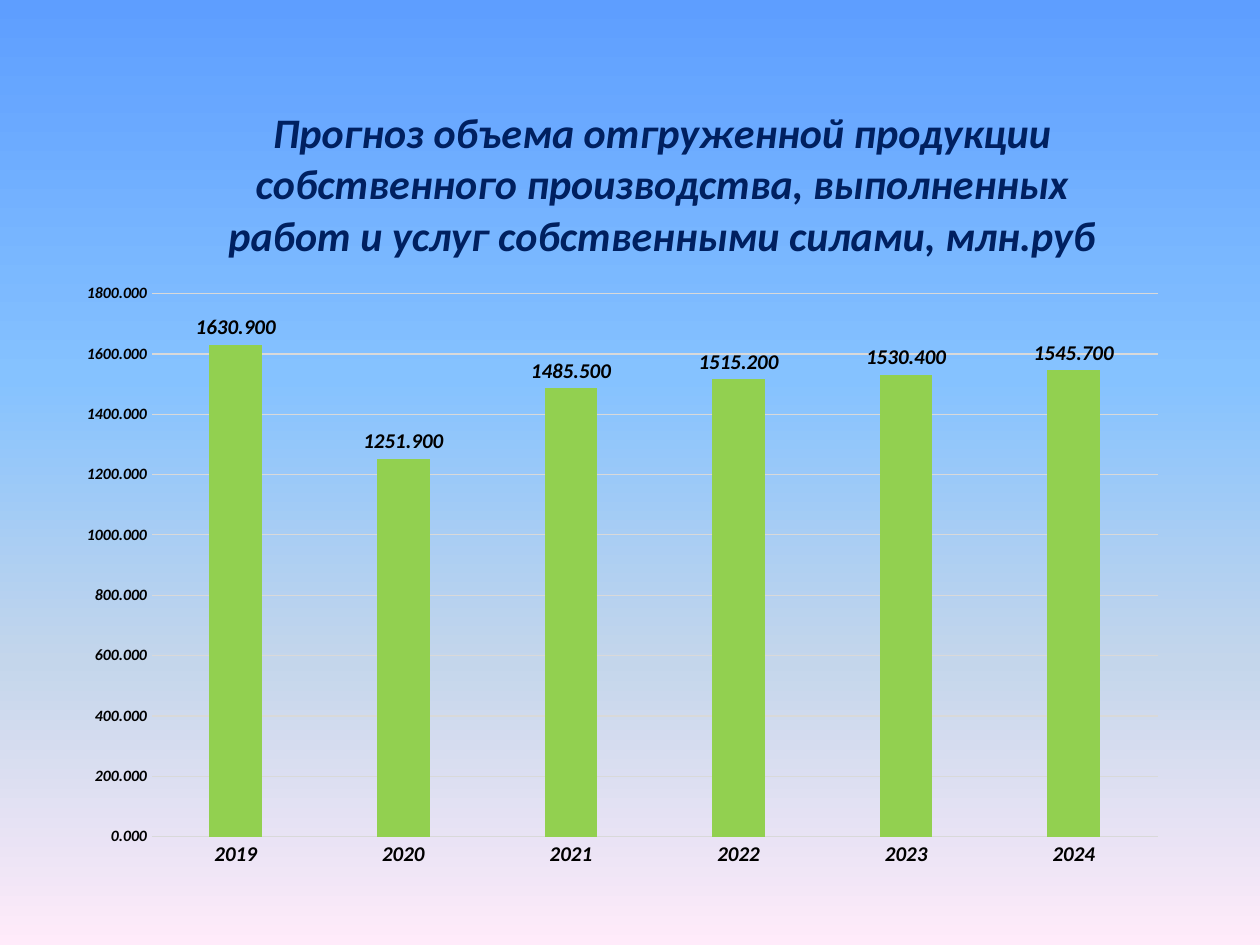
from lxml import etree
from pptx import Presentation
from pptx.chart.data import CategoryChartData
from pptx.dml.color import RGBColor
from pptx.enum.chart import XL_CHART_TYPE, XL_LABEL_POSITION, XL_TICK_MARK
from pptx.oxml.ns import qn
from pptx.util import Inches, Pt

BLACK = RGBColor(0x00, 0x00, 0x00)
NAVY = RGBColor(0x00, 0x20, 0x60)
GREEN = RGBColor(0x92, 0xD0, 0x50)
GRID_GRAY = RGBColor(0xD9, 0xD9, 0xD9)
BACKGROUND_STOPS = [(0, "5E9EFF"), (40, "85C2FF"), (70, "C4D6EB"), (100, "FFEBFA")]

TITLE = ("Прогноз объема отгруженной продукции собственного производства, "
         "выполненных работ и услуг собственными силами, млн.руб")
SHIPMENTS = {"2019": 1630.9, "2020": 1251.9, "2021": 1485.5,
             "2022": 1515.2, "2023": 1530.4, "2024": 1545.7}
NUMBER_FORMAT = "0.000"


def set_gradient_background(slide):
    fill = slide.background.fill
    fill.gradient()
    fill.gradient_angle = 270
    stops = fill.gradient_stops
    stop_list = slide.background._cSld.find(".//" + qn("a:gsLst"))
    for stop in list(stop_list):
        stop_list.remove(stop)
    for percent, color in BACKGROUND_STOPS:
        stop = etree.SubElement(stop_list, qn("a:gs"), pos=str(percent * 1000))
        etree.SubElement(stop, qn("a:srgbClr"), val=color)


def style_font(font, size, color=BLACK):
    font.name = "Calibri"
    font.size = Pt(size)
    font.bold = True
    font.italic = True
    font.color.rgb = color


def set_layout(parent, index, **settings):
    """Place a chart part by hand, in fractions of the chart area."""
    for layout in parent.findall(qn("c:layout")):
        parent.remove(layout)
    layout = etree.Element(qn("c:layout"))
    manual = etree.SubElement(layout, qn("c:manualLayout"))
    for name, value in settings.items():
        etree.SubElement(manual, qn("c:" + name), val=str(value))
    parent.insert(index, layout)


def style_title(chart):
    chart.has_title = True
    title = chart.chart_title
    title.include_in_layout = False
    title.text_frame.text = TITLE
    style_font(title.text_frame.paragraphs[0].runs[0].font, 24, NAVY)
    set_layout(title._element, 1, xMode="edge", yMode="edge", x=0.15, y=0.05)


def style_axes(chart):
    for axis, size in ((chart.category_axis, 12), (chart.value_axis, 9)):
        axis.major_tick_mark = XL_TICK_MARK.NONE
        axis.minor_tick_mark = XL_TICK_MARK.NONE
        style_font(axis.tick_labels.font, size)
    value_axis = chart.value_axis
    value_axis.minimum_scale = 0
    value_axis.maximum_scale = 1800
    value_axis.major_unit = 200
    value_axis.tick_labels.number_format = NUMBER_FORMAT
    value_axis.tick_labels.number_format_is_linked = False
    value_axis.format.line.fill.background()
    for line in (chart.category_axis.format.line, value_axis.major_gridlines.format.line):
        line.color.rgb = GRID_GRAY
        line.width = Pt(0.75)


def style_columns(plot):
    plot.gap_width = 219
    plot.overlap = -27
    plot.vary_by_categories = False
    fill = plot.series[0].format.fill
    fill.solid()
    fill.fore_color.rgb = GREEN
    plot.has_data_labels = True
    labels = plot.data_labels
    labels.show_value = True
    labels.position = XL_LABEL_POSITION.OUTSIDE_END
    labels.number_format = NUMBER_FORMAT
    labels.number_format_is_linked = False
    style_font(labels.font, 12)


def add_shipments_chart(slide, left, top, width, height):
    data = CategoryChartData(number_format=NUMBER_FORMAT)
    data.categories = list(SHIPMENTS)
    data.add_series("Series 1", list(SHIPMENTS.values()))
    chart = slide.shapes.add_chart(
        XL_CHART_TYPE.COLUMN_CLUSTERED, left, top, width, height, data).chart
    chart.has_legend = False
    chart.font.name = "Calibri"
    chart.font.size = Pt(10)
    style_title(chart)
    style_axes(chart)
    style_columns(chart.plots[0])
    plot_area = chart._chartSpace.find(".//" + qn("c:plotArea"))
    set_layout(plot_area, 0, layoutTarget="inner", xMode="edge", yMode="edge",
               x=0.088, y=0.289, w=0.905, h=0.659)


def main():
    presentation = Presentation()
    presentation.slide_width = Inches(10)
    presentation.slide_height = Inches(7.5)
    slide = presentation.slides.add_slide(presentation.slide_layouts[6])
    set_gradient_background(slide)
    add_shipments_chart(slide, Inches(0.43), Inches(0.44), Inches(8.82), Inches(6.54))
    presentation.save("out.pptx")


if __name__ == "__main__":
    main()
